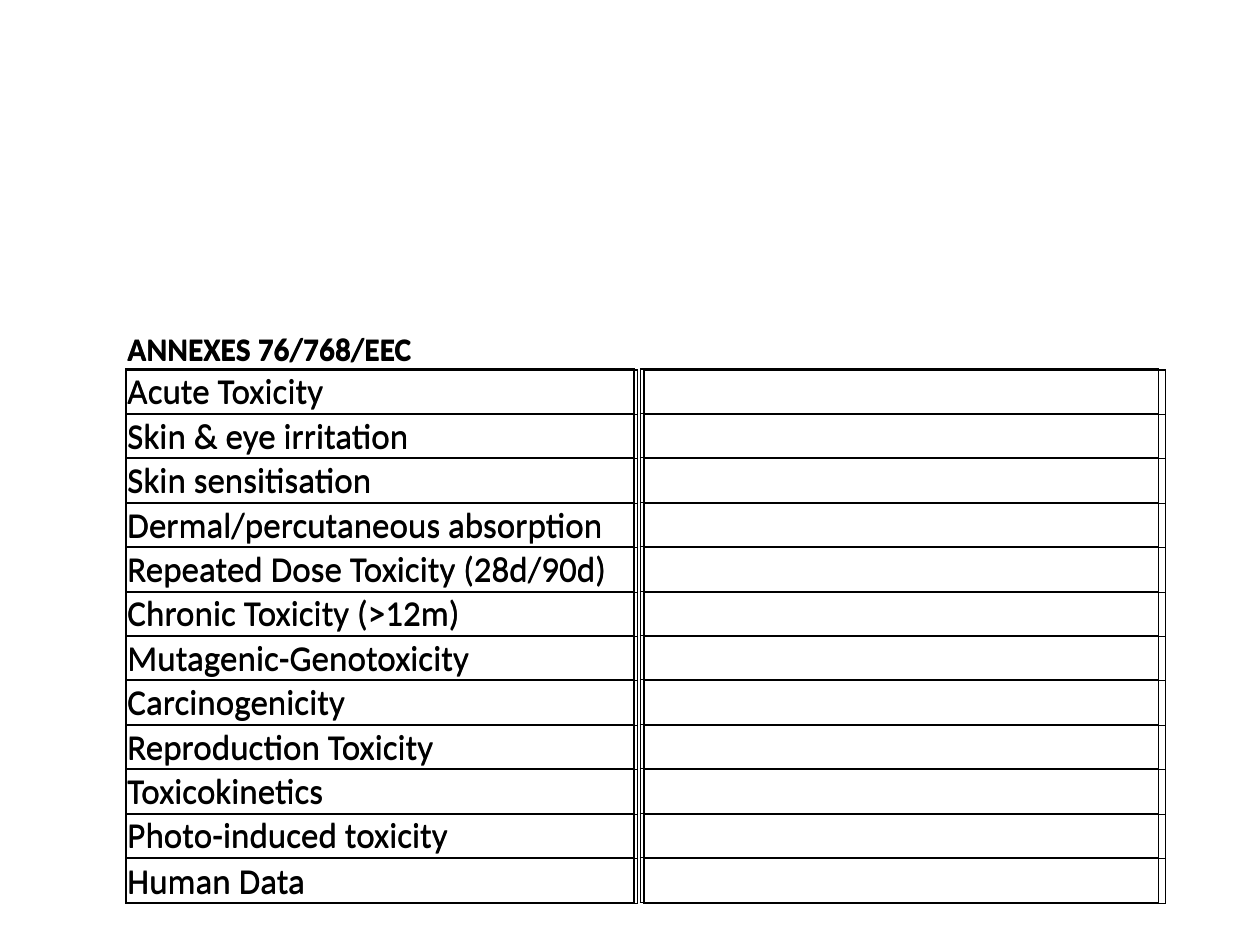
"""Build the slide listing the toxicity endpoints of the 76/768/EEC annexes."""
from lxml.etree import SubElement
from pptx import Presentation
from pptx.dml.color import RGBColor
from pptx.enum.text import MSO_ANCHOR as Anchor
from pptx.oxml.ns import qn
from pptx.util import Cm, Pt

HEADING = "ANNEXES 76/768/EEC"
ENDPOINTS = [
    "Acute Toxicity",
    "Skin & eye irritation",
    "Skin sensitisation",
    "Dermal/percutaneous absorption",
    "Repeated Dose Toxicity (28d/90d)",
    "Chronic Toxicity (>12m)",
    "Mutagenic-Genotoxicity",
    "Carcinogenicity",
    "Reproduction Toxicity",
    "Toxicokinetics",
    "Photo-induced toxicity",
    "Human Data",
]
GRIDS = [
    {"top": 6.53, "columns": (10.24, 0.13, 10.44)},
    {"top": 6.55, "columns": (10.31, 0.13, 10.52)},
]
LEFT = 2.54
ROW_HEIGHTS = [0.91, 0.86, 0.79] + [0.86] * 9 + [0.91]
GAP_COLUMN = 1
THEME = {
    "font": "Calibri", "ink": "000000", "heading": 18, "body": 20,
    "frame": 1, "rule": 0.5, "inset": 0.03,
}


def edge_widths(row, column):
    """Return the left, right, top and bottom line widths of a cell."""
    frame, rule = THEME["frame"], THEME["rule"]
    last = len(ENDPOINTS)
    if row == 0:
        return 0, 0, 0, 0 if column == GAP_COLUMN else frame
    if column == GAP_COLUMN:
        return frame, frame, 0, 0
    return frame, frame, frame if row == 1 else rule, frame if row == last else rule


def draw_edges(cell, widths):
    """Give a cell its four border lines, hiding those of zero width."""
    properties = cell._tc.get_or_add_tcPr()
    for side, width in zip("LRTB", widths):
        line = SubElement(properties, qn(f"a:ln{side}"), w=str(Pt(width)))
        if width:
            ink = SubElement(line, qn("a:solidFill"))
            SubElement(ink, qn("a:srgbClr"), val=THEME["ink"])
        else:
            SubElement(line, qn("a:noFill"))


def format_cell(cell, row, column):
    """Set the borders, insets and type of a cell."""
    draw_edges(cell, edge_widths(row, column))
    cell.fill.background()
    cell.vertical_anchor = Anchor.BOTTOM
    inset = 0 if column == GAP_COLUMN else Cm(THEME["inset"])
    cell.margin_left = cell.margin_right = cell.margin_top = inset
    cell.margin_bottom = 0
    font = cell.text_frame.paragraphs[0].font
    font.name = THEME["font"]
    font.size = Pt(THEME["heading" if row == 0 else "body"])
    font.bold = row == 0
    font.color.rgb = RGBColor.from_string(THEME["ink"])


def add_grid(slide, top, columns):
    """Add one endpoint table with an empty answer column."""
    labels = [HEADING, *ENDPOINTS]
    frame = slide.shapes.add_table(
        len(labels), len(columns), Cm(LEFT), Cm(top),
        Cm(sum(columns)), Cm(sum(ROW_HEIGHTS)))
    table = frame.table
    table.first_row = table.horz_banding = False
    for column, width in zip(table.columns, columns):
        column.width = Cm(width)
    for row, (label, height) in enumerate(zip(labels, ROW_HEIGHTS)):
        table.rows[row].height = Cm(height)
        table.cell(row, 0).text = label
        for column in range(len(columns)):
            format_cell(table.cell(row, column), row, column)


def main():
    """Build and save the presentation."""
    deck = Presentation()
    deck.slide_width, deck.slide_height = Cm(25.4), Cm(19.05)
    slide = deck.slides.add_slide(deck.slide_layouts[6])
    for grid in GRIDS:
        add_grid(slide, **grid)
    deck.save("out.pptx")


if __name__ == "__main__":
    main()
